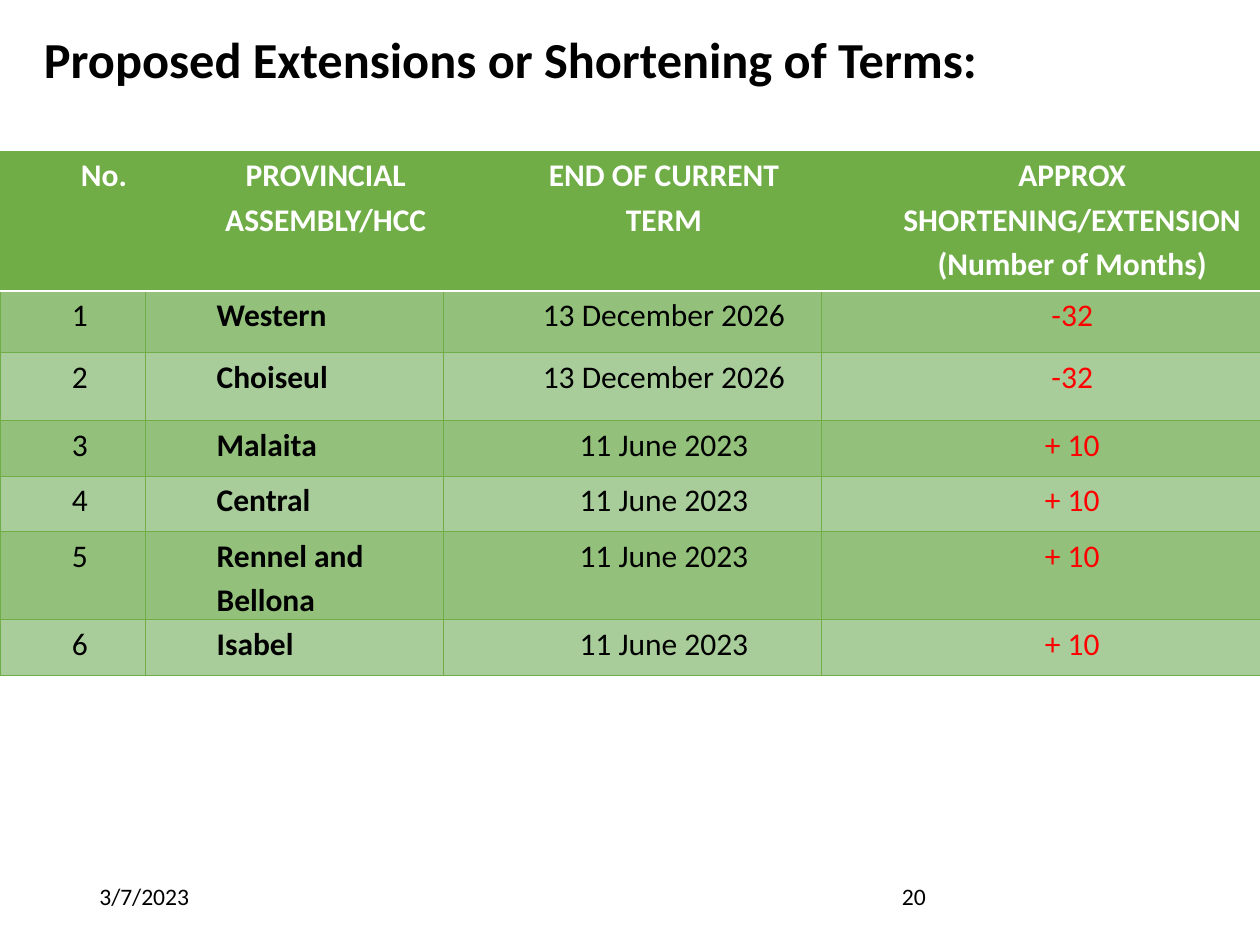
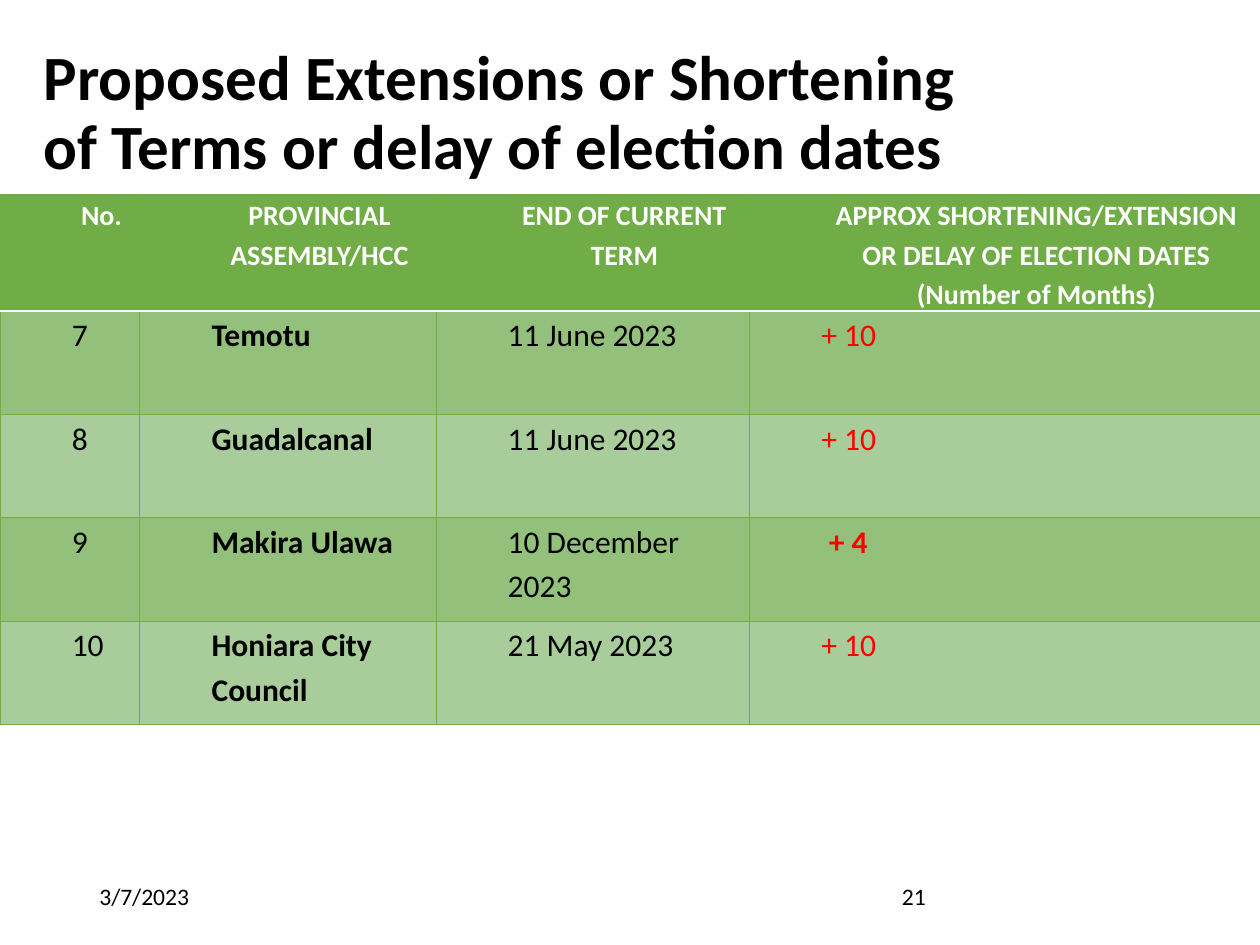
from lxml import etree
from pptx import Presentation
from pptx.dml.color import RGBColor
from pptx.enum.text import MSO_ANCHOR, PP_ALIGN
from pptx.oxml.ns import qn
from pptx.util import Inches, Pt

TOP, MIDDLE = MSO_ANCHOR.TOP, MSO_ANCHOR.MIDDLE
LEFT, CENTER = PP_ALIGN.LEFT, PP_ALIGN.CENTER

FONT = "Calibri"
BLACK = RGBColor(0x00, 0x00, 0x00)
WHITE = RGBColor(0xFF, 0xFF, 0xFF)
RED = RGBColor(0xFF, 0x00, 0x00)
GREEN = RGBColor(0x70, 0xAD, 0x47)
BAND_DARK = RGBColor(0x93, 0xC1, 0x7B)
BAND_LIGHT = RGBColor(0xA9, 0xCD, 0x9A)

DATE = "3/7/2023"
CELL_INDENT = 0.5
BODY_SIZE = 18


def add_run(paragraph, text, size, color=BLACK, bold=False):
    """Add one run in the deck's font."""
    run = paragraph.add_run()
    run.text = text
    run.font.name = FONT
    run.font.size = Pt(size)
    run.font.bold = bold
    run.font.color.rgb = color


def add_text(slide, box, text, size, bold=False, anchor=TOP, spacing=1.0):
    """Place a wrapped line of text in a left, top, width, height box."""
    frame = slide.shapes.add_textbox(*map(Inches, box)).text_frame
    frame.word_wrap = True
    frame.vertical_anchor = anchor
    frame.paragraphs[0].line_spacing = spacing
    add_run(frame.paragraphs[0], text, size, bold=bold)


def add_frame(prs, title, title_box, title_size, anchor, number):
    """Start a slide with its title, date and page number."""
    slide = prs.slides.add_slide(prs.slide_layouts[6])
    for left, text in ((0.69, DATE), (7.06, str(number))):
        add_text(slide, (left, 6.95, 2.25, 0.4), text, 13.5)
    add_text(slide, title_box, title, title_size, True, anchor, 0.9)
    return slide


def set_borders(cell, top, bottom):
    """Draw green sides and the given (colour, points) top and bottom lines."""
    side = (GREEN, 0.5)
    properties = cell._tc.get_or_add_tcPr()
    for tag, (color, width) in zip(("lnL", "lnR", "lnT", "lnB"), (side, side, top, bottom)):
        line = etree.SubElement(properties, qn(f"a:{tag}"), w=str(Pt(width)))
        fill = etree.SubElement(line, qn("a:solidFill"))
        etree.SubElement(fill, qn("a:srgbClr"), val=str(color))


def fill_cell(cell, text, size, color, bold, align, indent=CELL_INDENT):
    """Write the lines of one table cell."""
    cell.margin_left = cell.margin_right = Inches(0.07)
    cell.margin_top = cell.margin_bottom = 0
    frame = cell.text_frame
    for index, line in enumerate(text.split("\n")):
        paragraph = frame.add_paragraph() if index else frame.paragraphs[0]
        paragraph._p.get_or_add_pPr().set("marL", str(Inches(indent)))
        paragraph.alignment = align
        paragraph.line_spacing = 1.15
        add_run(paragraph, line, size, color, bold)


def add_terms_table(slide, top, widths, heights, header, header_size, rows, aligns, special=None):
    """Build the banded table of terms; special restyles single cells."""
    special = special or {}
    table = slide.shapes.add_table(len(heights), len(widths), 0, Inches(top),
                                   Inches(sum(widths)), Inches(sum(heights))).table
    table.horz_banding = False
    for column, width in zip(table.columns, widths):
        column.width = Inches(width)
    for row, height in zip(table.rows, heights):
        row.height = Inches(height)
    grid_line, header_line = (GREEN, 0.5), (WHITE, 1)
    body_styles = ((BLACK, False), (BLACK, True), (BLACK, False), (RED, False))
    for r, texts in enumerate([header, *rows]):
        for c, text in enumerate(texts):
            cell = table.cell(r, c)
            set_borders(cell, header_line if r == 1 else grid_line,
                        header_line if r == 0 else grid_line)
            cell.fill.solid()
            if r == 0:
                cell.fill.fore_color.rgb = GREEN
                fill_cell(cell, text, header_size, WHITE, True, CENTER)
            else:
                cell.fill.fore_color.rgb = BAND_DARK if r % 2 else BAND_LIGHT
                color, bold = body_styles[c]
                bold, indent = special.get(text, (bold, CELL_INDENT))
                fill_cell(cell, text, BODY_SIZE, color, bold, aligns[c], indent)


def add_first_terms(prs):
    """Show assemblies 1 to 6."""
    slide = add_frame(prs, "Proposed Extensions or Shortening of Terms:",
                      (0.25, 0.23, 8.33, 0.96), 28.8, TOP, 20)
    header = ("No.", "PROVINCIAL ASSEMBLY/HCC", "END OF CURRENT TERM",
              "APPROX SHORTENING/EXTENSION\n(Number of Months)")
    rows = (
        ("1", "Western", "13 December 2026", "-32"),
        ("2", "Choiseul", "13 December 2026", "-32"),
        ("3", "Malaita", "11 June 2023", "+ 10"),
        ("4", "Central", "11 June 2023", "+ 10"),
        ("5", "Rennel and Bellona", "11 June 2023", "+ 10"),
        ("6", "Isabel", "11 June 2023", "+ 10"),
    )
    add_terms_table(slide, 1.2, (1.15, 2.37, 3, 3.48),
                    (1.11, 0.49, 0.54, 0.44, 0.44, 0.7, 0.44),
                    header, 18, rows, (LEFT, LEFT, CENTER, CENTER))


def add_remaining_terms(prs):
    """Show assemblies 7 to 10."""
    slide = add_frame(prs, "Proposed Extensions or Shortening of Terms or delay of election dates",
                      (0.25, 0.23, 7.73, 1.36), 36, MIDDLE, 21)
    header = ("No.", "PROVINCIAL ASSEMBLY/HCC", "END OF CURRENT TERM",
              "APPROX SHORTENING/EXTENSION OR DELAY OF ELECTION DATES\n(Number of Months)")
    rows = (
        ("7", "Temotu", "11 June 2023", "+ 10"),
        ("8", "Guadalcanal", "11 June 2023", "+ 10"),
        ("9", "Makira Ulawa", "10 December 2023", "+ 4"),
        ("10", "Honiara City Council", "21 May 2023", "+ 10"),
    )
    add_terms_table(slide, 1.54, (1.11, 2.35, 2.49, 4.05), (0.93, *[0.82] * len(rows)),
                    header, 16, rows, (LEFT,) * 4, {"+ 4": (True, 0.56)})


def main():
    """Build and save the deck."""
    prs = Presentation()
    prs.slide_width, prs.slide_height = Inches(10), Inches(7.5)
    add_first_terms(prs)
    add_remaining_terms(prs)
    prs.save("out.pptx")


if __name__ == "__main__":
    main()
